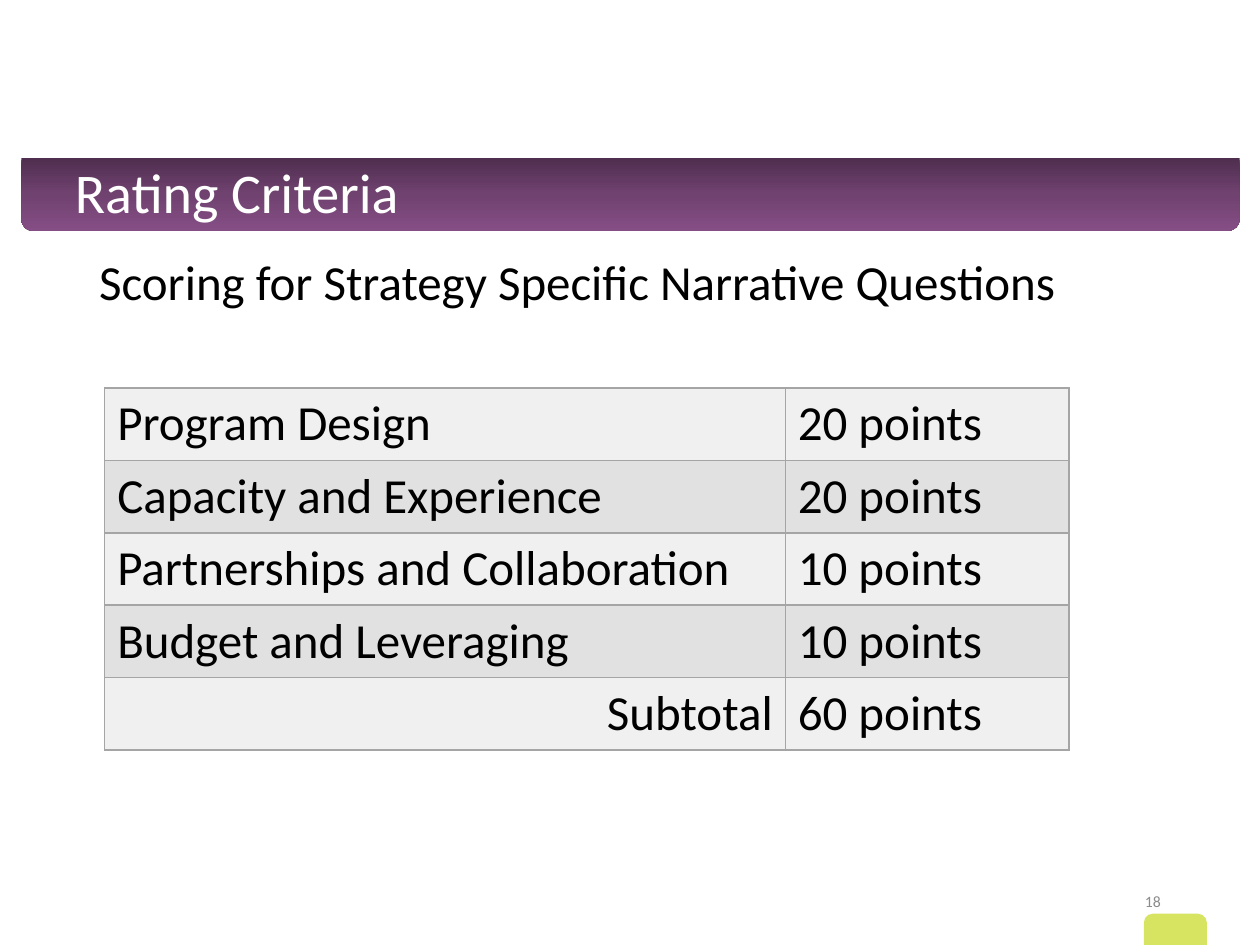
from copy import deepcopy

from lxml import etree
from pptx import Presentation
from pptx import util as u
from pptx.dml.color import RGBColor
from pptx.enum import shapes, text
from pptx.oxml import ns

COLORS = {
    "band_dark": "4F2E4F", "band_mid": "704270", "band_light": "854E85",
    "tab": "D7E462", "white": "FFFFFF", "black": "000000", "number": "8C8C8C",
    "row_light": "F0F0F0", "row_dark": "E1E1E1", "border": "A5A5A5",
}
FONT = "Calibri"
CRITERIA = [
    ("Program Design", "20 points"),
    ("Capacity and Experience", "20 points"),
    ("Partnerships and Collaboration", "10 points"),
    ("Budget and Leveraging", "10 points"),
    ("Subtotal", "60 points"),
]


def rgb(name):
    return RGBColor.from_string(COLORS[name])


def set_attrs(obj, **values):
    for name, value in values.items():
        setattr(obj, name, value)


def write(tf, words, size, color, **para_format):
    p = tf.paragraphs[0]
    set_attrs(p, **para_format)
    r = p.add_run()
    r.text = words
    set_attrs(r.font, name=FONT, size=u.Pt(size))
    r.font.color.rgb = rgb(color)


def add_text(s, box, words, size, color, frame=None, **para_format):
    tf = s.shapes.add_textbox(*map(u.Cm, box)).text_frame
    set_attrs(tf, word_wrap=True, **(frame or {}))
    write(tf, words, size, color, **para_format)


def add_rounded(s, box, top=0, bottom=0):
    sp = s.shapes.add_shape(shapes.MSO_SHAPE.ROUND_2_SAME_RECTANGLE, *map(u.Cm, box))
    sp.adjustments[0], sp.adjustments[1] = top, bottom
    sp.shadow.inherit = False
    sp.line.fill.background()
    return sp


def fill_gradient(sp, names):
    """Even top-to-bottom gradient through the named colours."""
    sp.fill.gradient()
    sp.fill.gradient_angle = 270
    stops = sp._element.spPr.find(".//" + ns.qn("a:gsLst"))
    while len(stops) < len(names):
        stops.append(deepcopy(stops[0]))
    for i, (stop, name) in enumerate(zip(sp.fill.gradient_stops, names)):
        stop.position = i / (len(names) - 1)
        stop.color.rgb = rgb(name)


def add_borders(cell):
    tc_pr = cell._tc.get_or_add_tcPr()
    for side in ("lnL", "lnR", "lnT", "lnB"):
        ln = etree.SubElement(tc_pr, ns.qn(f"a:{side}"), w=str(u.Pt(1)))
        fill = etree.SubElement(ln, ns.qn("a:solidFill"))
        etree.SubElement(fill, ns.qn("a:srgbClr"), val=COLORS["border"])


def add_score_table(s, left, top, widths, row_height):
    size = (sum(widths), row_height * len(CRITERIA))
    table = s.shapes.add_table(len(CRITERIA), len(widths),
                               *map(u.Cm, (left, top, *size))).table
    set_attrs(table, first_row=False, horz_banding=False)
    for col, width in zip(table.columns, widths):
        col.width = u.Cm(width)
    for i, values in enumerate(CRITERIA):
        table.rows[i].height = u.Cm(row_height)
        for cell, value in zip(table.rows[i].cells, values):
            add_borders(cell)
            cell.fill.solid()
            cell.fill.fore_color.rgb = rgb("row_dark" if i % 2 else "row_light")
            align = text.PP_ALIGN.RIGHT if value == "Subtotal" else text.PP_ALIGN.LEFT
            write(cell.text_frame, value, 28, "black", alignment=align)


def main():
    prs = Presentation()
    set_attrs(prs, slide_width=u.Cm(25.4), slide_height=u.Cm(19.05))
    s = prs.slides.add_slide(prs.slide_layouts[6])
    middle = text.MSO_ANCHOR.MIDDLE

    # Title band and page tab
    band = add_rounded(s, (0.43, 3.18, 24.56, 1.48), bottom=0.17)
    fill_gradient(band, ("band_dark", "band_mid", "band_light"))
    tab = add_rounded(s, (23.06, 18.42, 1.27, 1.07), top=0.17)
    tab.fill.solid()
    tab.fill.fore_color.rgb = rgb("tab")

    # Title, heading and page number
    add_text(s, (0.2, 3.18, 24.77, 1.52), "Rating Criteria", 32, "white",
             {"vertical_anchor": middle, "margin_left": u.Cm(1.31)}, line_spacing=0.9)
    add_text(s, (1.75, 5.08, 21.9, 12.09),
             "Scoring for Strategy Specific Narrative Questions", 28, "black",
             line_spacing=0.9)
    add_text(s, (17.93, 17.65, 5.72, 1.02), "18", 9, "number",
             {"vertical_anchor": middle}, alignment=text.PP_ALIGN.RIGHT)

    # Scores
    add_score_table(s, 2.11, 7.82, (13.72, 5.72), 1.46)

    prs.save("out.pptx")


if __name__ == "__main__":
    main()
